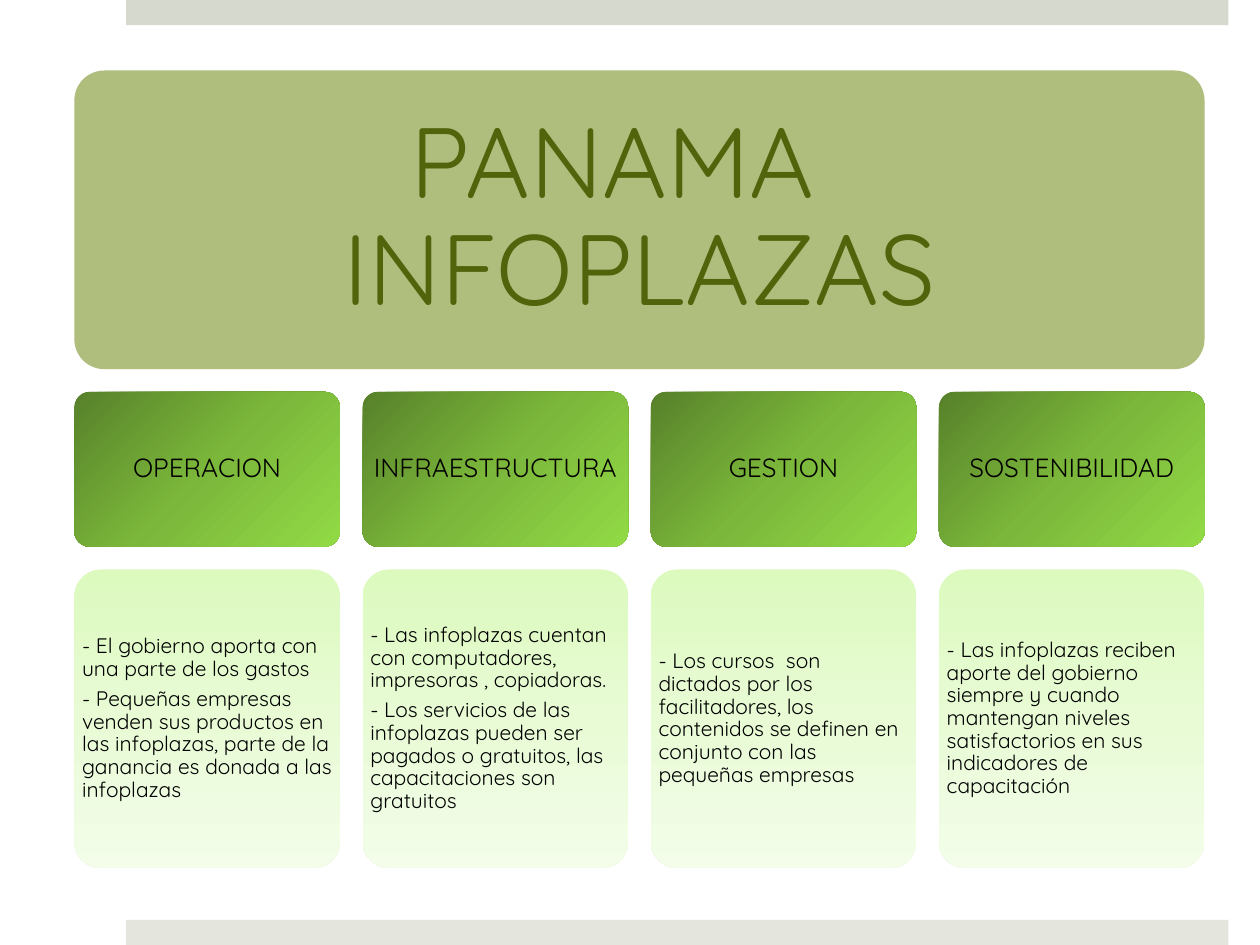
from dataclasses import dataclass

from lxml import etree
from pptx import Presentation
from pptx.dml.color import RGBColor
from pptx.enum.shapes import MSO_SHAPE
from pptx.enum.text import MSO_ANCHOR, PP_ALIGN
from pptx.oxml.ns import qn
from pptx.util import Inches, Pt

RECT, ROUND = MSO_SHAPE.RECTANGLE, MSO_SHAPE.ROUNDED_RECTANGLE
LEFT, CENTER = PP_ALIGN.LEFT, PP_ALIGN.CENTER
MIDDLE = MSO_ANCHOR.MIDDLE

WIDE, HIGH = 10, 7.5
EDGE, TOP = 0.59, 0.56
SPAN, GAP, COUNT = 8.97, 0.18, 4
COL = (SPAN - GAP * (COUNT - 1)) / COUNT
TALL, LOW = 2.37, 1.23
ROWS = (TOP, TOP + TALL + GAP, TOP + TALL + LOW + 2 * GAP)
FONT = "Quicksand"


@dataclass(frozen=True)
class Box:
    left: float
    top: float
    width: float
    height: float


@dataclass(frozen=True)
class Style:
    fill: tuple[str, ...]
    size: int
    ink: str
    align: PP_ALIGN
    inset: float = 0
    angle: int = 0


@dataclass(frozen=True)
class Topic:
    head: str
    notes: tuple[str, ...]


TITLE = Style(("AFBD7D",), 57, "51640B", CENTER, 0.17)
HEAD = Style(("57812A", "7BB73B", "92DA46"), 15, "000000", CENTER, 0.02, 45)
BODY = Style(("DCFABE", "E8FBD5", "F3FDEA"), 12, "000000", LEFT, 0, 90)

TOPICS = (
    Topic("OPERACION", (
        "- El gobierno aporta con una parte de los gastos",
        "- Pequeñas empresas venden sus productos en las infoplazas, "
        "parte de la ganancia es donada a las infoplazas",
    )),
    Topic("INFRAESTRUCTURA", (
        "- Las infoplazas cuentan con computadores,  impresoras , copiadoras.",
        "- Los servicios de las infoplazas pueden ser pagados o gratuitos, "
        "las capacitaciones son  gratuitos",
    )),
    Topic("GESTION", (
        "- Los cursos  son dictados por los facilitadores, los contenidos "
        "se definen en conjunto con las pequeñas empresas",
    )),
    Topic("SOSTENIBILIDAD", (
        "- Las infoplazas reciben aporte del gobierno siempre y cuando "
        "mantengan niveles satisfactorios en sus indicadores de capacitación",
    )),
)


def color(code: str) -> RGBColor:
    return RGBColor.from_string(code)


def assign(target, values: dict) -> None:
    for name, value in values.items():
        setattr(target, name, value)


def blend(shape, stops: tuple[str, ...], angle: int) -> None:
    """Fill with evenly spaced stops; the angle runs clockwise."""
    shape.fill.gradient()
    grad = shape._element.spPr.find(qn("a:gradFill"))
    for child in list(grad):
        grad.remove(child)
    group = etree.SubElement(grad, qn("a:gsLst"))
    for i, code in enumerate(stops):
        place = 100000 * i // (len(stops) - 1)
        stop = etree.SubElement(group, qn("a:gs"), pos=str(place))
        etree.SubElement(stop, qn("a:srgbClr"), val=code)
    etree.SubElement(grad, qn("a:lin"), ang=str(angle * 60000), scaled="0")


def block(slide, kind: MSO_SHAPE, box: Box, fill: tuple[str, ...], angle: int = 0):
    sizes = (box.left, box.top, box.width, box.height)
    shape = slide.shapes.add_shape(kind, *map(Inches, sizes))
    shape.shadow.inherit = False
    shape.line.fill.background()
    if len(fill) > 1:
        blend(shape, fill, angle)
    else:
        shape.fill.solid()
        shape.fill.fore_color.rgb = color(fill[0])
    return shape


def card(slide, box: Box, lines: tuple[str, ...], style: Style) -> None:
    shape = block(slide, ROUND, box, style.fill, style.angle)
    shape.adjustments[0] = 0.1
    frame = shape.text_frame
    sides = ("left", "right", "top", "bottom")
    assign(frame, {f"margin_{side}": Inches(style.inset) for side in sides})
    assign(frame, {"word_wrap": True, "vertical_anchor": MIDDLE})
    frame.text = "\n".join(lines)
    for para in frame.paragraphs:
        assign(para, {"alignment": style.align, "line_spacing": 0.9,
                      "space_after": Pt(style.size * 0.35)})
        for run in para.runs:
            assign(run.font, {"name": FONT, "size": Pt(style.size)})
            run.font.color.rgb = color(style.ink)


def main() -> None:
    deck = Presentation()
    assign(deck, {"slide_width": Inches(WIDE), "slide_height": Inches(HIGH)})
    slide = deck.slides.add_slide(deck.slide_layouts[6])

    band = 0.2
    for top, fill in ((0, "D6D9CD"), (HIGH - band, "E4E6DE")):
        block(slide, RECT, Box(WIDE * 0.1, top, WIDE * 0.875, band), (fill,))

    card(slide, Box(EDGE, ROWS[0], SPAN, TALL), ("PANAMA  \vINFOPLAZAS",), TITLE)
    for i, topic in enumerate(TOPICS):
        left = EDGE + i * (COL + GAP)
        card(slide, Box(left, ROWS[1], COL, LOW), (topic.head,), HEAD)
        card(slide, Box(left, ROWS[2], COL, TALL), topic.notes, BODY)

    deck.save("out.pptx")


if __name__ == "__main__":
    main()
